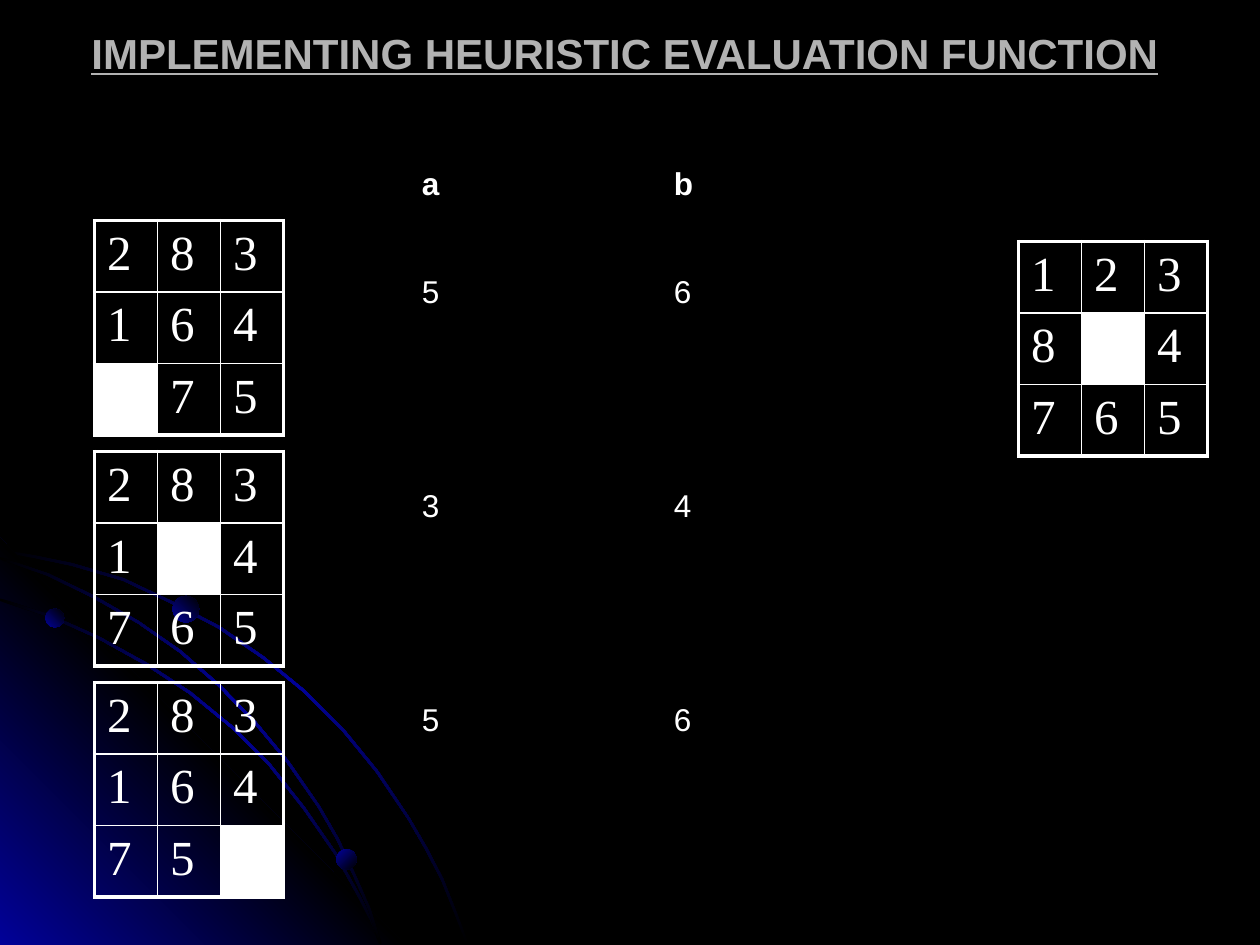
from dataclasses import dataclass
from math import hypot

from lxml.etree import SubElement
from pptx import Presentation
from pptx.dml.color import RGBColor
from pptx.enum.shapes import MSO_SHAPE as Shape
from pptx.enum.text import PP_ALIGN as Align
from pptx.oxml import parse_xml
from pptx.oxml.ns import nsdecls, qn
from pptx.util import Inches, Pt

BLACK = RGBColor(0x00, 0x00, 0x00)
BLUE = RGBColor(0x01, 0x01, 0x99)
GREY = RGBColor(0xB2, 0xB2, 0xB2)
WHITE = RGBColor(0xFF, 0xFF, 0xFF)

# Gradient stops, evenly spaced
ARC_GLOW = (BLACK, BLUE, BLACK)
CORNER_GLOW = (BLUE, BLACK, BLUE)
BEAD_GLOW = (BLUE, BLACK)
DOWN_RIGHT, UP_RIGHT = 45, 315

# Fonts
TITLE_FONT = dict(name="Arial", size=Pt(24), bold=True, underline=True)
TILE_FONT = dict(name="Times New Roman", size=Pt(28))
SCORE_FONT = dict(name="Arial", size=Pt(18))

# Boards stand on a grid of twelfths of an inch
TWELFTH = 1 / 12
SIDE = 3
BOARD_W, BOARD_H = 1.5, 1.7
BOARD_LEFT, BOARD_TOP = 9 * TWELFTH, 21 * TWELFTH
BOARD_PITCH = 22 * TWELFTH
GOAL_LEFT, GOAL_TOP = 97 * TWELFTH, 23 * TWELFTH
FRAME_LINE, INNER_LINE = Pt(2.25), Pt(1)
EMPTY = " "

# Score lines sit on a regular pitch, in points
SCORE_PITCH, SCORE_LINE = 30.4, 20.7
SCORE_TABS = (0.5, 2.5)

ARC_WIDTH = 0.02
POINTS_PER_INCH = 1000


@dataclass(frozen=True)
class Bead:
    left: float
    top: float
    size: float
    angle: int


@dataclass(frozen=True)
class Board:
    left: float
    top: float
    rows: tuple[str, ...]


@dataclass(frozen=True)
class ScoreRow:
    a: str
    b: str
    steps: int  # pitches below the row above
    bold: bool = False


# Centre lines of the arcs
OUTER_ARC = ((0, 4.37), (0.28, 4.42), (0.57, 4.48), (0.98, 4.6), (1.36, 4.78),
             (1.74, 4.98), (2.09, 5.22), (2.42, 5.49), (2.72, 5.79), (2.99, 6.12),
             (3.24, 6.49), (3.38, 6.73), (3.51, 6.98), (3.61, 7.23), (3.71, 7.49))
INNER_ARC = ((0, 4.76), (0.4, 4.89), (0.78, 5.06), (1.16, 5.27), (1.51, 5.5),
             (1.84, 5.77), (2.14, 6.07), (2.41, 6.41), (2.66, 6.77), (2.86, 7.13),
             (2.95, 7.31), (3.02, 7.49))
MIDDLE_ARC = ((0, 4.43), (0.38, 4.56), (0.75, 4.74), (1.1, 4.94), (1.43, 5.17),
              (1.74, 5.44), (2.03, 5.74), (2.28, 6.04), (2.53, 6.4), (2.68, 6.66),
              (2.81, 6.94), (2.93, 7.21), (3.02, 7.49))
CORNER = ((3.22, 7.5), (0, 7.5), (0, 4.27))
BEADS = (Bead(0.36, 4.83, 0.15, UP_RIGHT), Bead(2.67, 6.74, 0.16, DOWN_RIGHT),
         Bead(1.37, 4.73, 0.21, UP_RIGHT))

STATES = (("283", "164", " 75"), ("283", "1 4", "765"), ("283", "164", "75 "))
STATE_BOARDS = [Board(BOARD_LEFT, BOARD_TOP + i * BOARD_PITCH, rows)
                for i, rows in enumerate(STATES)]
GOAL_BOARD = Board(GOAL_LEFT, GOAL_TOP, ("123", "8 4", "765"))

SCORES = (ScoreRow("a", "b", 0, bold=True), ScoreRow("5", "6", 2),
          ScoreRow("3", "4", 4), ScoreRow("5", "6", 4))


def add_run(p, text: str, color: RGBColor, **fmt) -> None:
    r = p.add_run()
    r.text = text
    for name, value in fmt.items():
        setattr(r.font, name, value)
    r.font.color.rgb = color


def shade(sp, colors: tuple, angle: int) -> None:
    """Fill with a gradient whose angle runs clockwise."""
    sp.shadow.inherit = False
    sp.line.fill.background()
    sp.fill.gradient()
    sp.fill.gradient_angle = 360 - angle
    stops = sp._element.spPr.find(qn("a:gradFill")).find(qn("a:gsLst"))
    for old in list(stops):
        stops.remove(old)
    for i, color in enumerate(colors):
        gs = SubElement(stops, qn("a:gs"), pos=str(100000 * i // (len(colors) - 1)))
        SubElement(gs, qn("a:srgbClr"), val=str(color))


def draw_polygon(s, points: tuple, colors: tuple, angle: int) -> None:
    # The builder rounds to whole units, so inches become fine units first
    units = [(x * POINTS_PER_INCH, y * POINTS_PER_INCH) for x, y in points]
    builder = s.shapes.build_freeform(*units[0], scale=Inches(1) / POINTS_PER_INCH)
    builder.add_line_segments(units[1:], close=True)
    shade(builder.convert_to_shape(), colors, angle)


def draw_arc(s, centre: tuple) -> None:
    """Thicken a centre line: out along one side, back along the other."""
    upper, lower = [], []
    for i, (x, y) in enumerate(centre):
        (x0, y0), (x1, y1) = centre[max(i - 1, 0)], centre[min(i + 1, len(centre) - 1)]
        half = ARC_WIDTH / 2 / hypot(x1 - x0, y1 - y0)
        dx, dy = (y1 - y0) * half, (x1 - x0) * half
        upper.append((x + dx, y - dy))
        lower.append((max(x - dx, 0), y + dy))
    draw_polygon(s, (*upper, *reversed(lower)), ARC_GLOW, DOWN_RIGHT)


def draw_bead(s, b: Bead) -> None:
    sp = s.shapes.add_shape(Shape.OVAL, Inches(b.left), Inches(b.top),
                            Inches(b.size), Inches(b.size))
    shade(sp, BEAD_GLOW, b.angle)


def set_borders(cell, row: int, col: int) -> None:
    """Thick lines around the board, thin ones inside."""
    last = SIDE - 1
    on_frame = {"lnL": col == 0, "lnR": col == last, "lnT": row == 0, "lnB": row == last}
    tc_pr = cell._tc.get_or_add_tcPr()
    for i, (side, framed) in enumerate(on_frame.items()):
        tc_pr.insert(i, parse_xml(
            f'<a:{side} {nsdecls("a")} w="{FRAME_LINE if framed else INNER_LINE}">'
            f'<a:solidFill><a:srgbClr val="{WHITE}"/></a:solidFill></a:{side}>'))


def draw_board(s, b: Board) -> None:
    table = s.shapes.add_table(SIDE, SIDE, Inches(b.left), Inches(b.top),
                               Inches(BOARD_W), Inches(BOARD_H)).table
    table.first_row = table.horz_banding = False
    for row, tiles in enumerate(b.rows):
        for col, tile in enumerate(tiles):
            cell = table.cell(row, col)
            if tile == EMPTY:
                cell.fill.solid()
                cell.fill.fore_color.rgb = WHITE
            else:
                cell.fill.background()
                add_run(cell.text_frame.paragraphs[0], tile, WHITE, **TILE_FONT)
            set_borders(cell, row, col)


def add_text_frame(s, left: float, top: float, width: float, height: float):
    tf = s.shapes.add_textbox(Inches(left), Inches(top),
                              Inches(width), Inches(height)).text_frame
    tf.word_wrap = True
    return tf


def draw_title(s, text: str) -> None:
    p = add_text_frame(s, 0.25, 0.17, 9.42, 0.5).paragraphs[0]
    p.alignment = Align.CENTER
    add_run(p, text, GREY, **TITLE_FONT)


def draw_scores(s, rows: tuple) -> None:
    tf = add_text_frame(s, 2.75, 1.25, 4, 4.95)
    for i, row in enumerate(rows):
        p = tf.add_paragraph() if i else tf.paragraphs[0]
        p.space_before = Pt(max(row.steps * SCORE_PITCH - SCORE_LINE, 0))
        tabs = SubElement(p._p.get_or_add_pPr(), qn("a:tabLst"))
        for stop in SCORE_TABS:
            SubElement(tabs, qn("a:tab"), pos=str(Inches(stop)), algn="l")
        add_run(p, f"\t{row.a}\t{row.b}", WHITE, bold=row.bold, **SCORE_FONT)


def main() -> None:
    prs = Presentation()
    prs.slide_width, prs.slide_height = Inches(10), Inches(7.5)
    s = prs.slides.add_slide(prs.slide_layouts[6])
    s.background.fill.solid()
    s.background.fill.fore_color.rgb = BLACK

    # Corner decoration, back to front
    draw_arc(s, OUTER_ARC)
    draw_polygon(s, CORNER, CORNER_GLOW, UP_RIGHT)
    for arc in (INNER_ARC, MIDDLE_ARC):
        draw_arc(s, arc)
    for bead in BEADS:
        draw_bead(s, bead)

    # Title, puzzle states with their scores, and the goal
    draw_title(s, "IMPLEMENTING HEURISTIC EVALUATION FUNCTION")
    for board in STATE_BOARDS:
        draw_board(s, board)
    draw_scores(s, SCORES)
    draw_board(s, GOAL_BOARD)

    prs.save("out.pptx")


if __name__ == "__main__":
    main()
